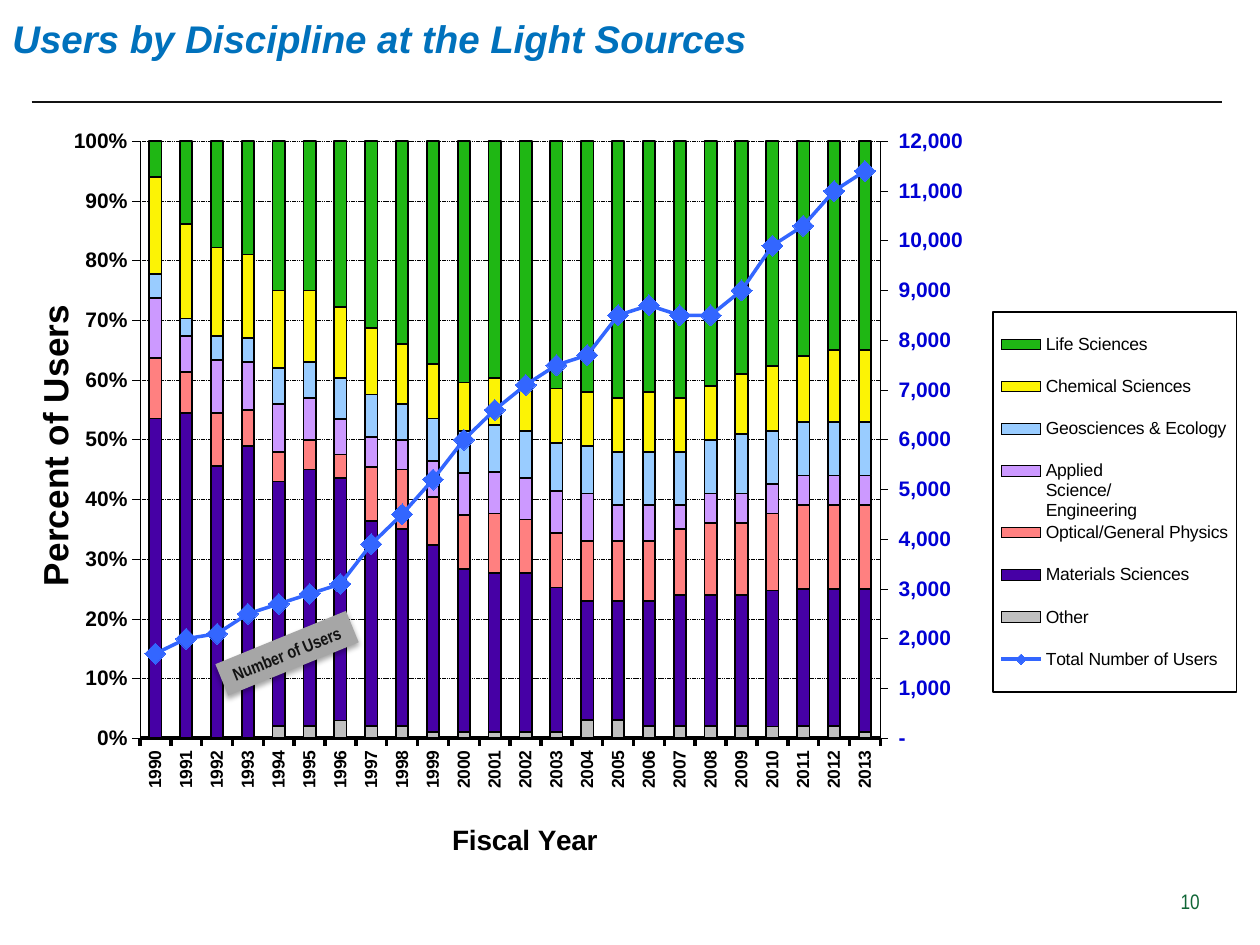
from copy import deepcopy
from pptx import Presentation
from pptx.chart.axis import CategoryAxis, ValueAxis
from pptx.chart.data import CategoryChartData as Data
from pptx.dml.color import RGBColor as RGB
from pptx.enum.chart import XL_CHART_TYPE as Kind, XL_LEGEND_POSITION as Pos
from pptx.enum.chart import XL_MARKER_STYLE as Mark, XL_TICK_MARK as Tick
from pptx.enum.dml import MSO_LINE as Dash
from pptx.enum.shapes import MSO_CONNECTOR as Conn, MSO_SHAPE as Shape
from pptx.enum.text import MSO_ANCHOR as Anchor, PP_ALIGN as Align
from pptx.oxml import parse_xml
from pptx.oxml.ns import nsdecls, qn
from pptx.util import Pt

COLORS = {
    "title": "0071BC", "ink": "131313", "black": "000000", "page": "106636",
    "note": "A6A6A6", "count": "0000D4", "line": "3366FF",
}
YEARS = [str(y) for y in range(1990, 2014)]
# Name, fill, percent of users per year
SHARES = [
    ("Other", "C0C0C0",
     [0, 0, 0, 0, 2, 2, 3, 2, 2, 1, 1, 1, 1, 1, 3, 3, 2, 2, 2, 2, 2, 2, 2, 1]),
    ("Materials Sciences", "4600A5",
     [53, 55, 46, 49, 41, 43, 41, 34, 33, 31, 27, 27,
      27, 24, 20, 20, 21, 22, 22, 22, 23, 23, 23, 24]),
    ("Optical/General Physics", "FF8080",
     [10, 7, 9, 6, 5, 5, 4, 9, 10, 8, 9, 10,
      9, 9, 10, 10, 10, 11, 12, 12, 13, 14, 14, 14]),
    ("Applied Science/Engineering", "CC99FF",
     [10, 6, 9, 8, 8, 7, 6, 5, 5, 6, 7, 7, 7, 7, 8, 6, 6, 4, 5, 5, 5, 5, 5, 5]),
    ("Geosciences & Ecology", "99CCFF",
     [4, 3, 4, 4, 6, 6, 7, 7, 6, 7, 7, 8, 8, 8, 8, 9, 9, 9, 9, 10, 9, 9, 9, 9]),
    ("Chemical Sciences", "FCF305",
     [16, 16, 15, 14, 13, 12, 12, 11, 10, 9, 8, 8,
      8, 9, 9, 9, 10, 9, 9, 10, 11, 11, 12, 12]),
    ("Life Sciences", "1FB714",
     [6, 14, 18, 19, 25, 25, 28, 31, 34, 37, 40, 40,
      41, 41, 42, 43, 42, 43, 41, 39, 38, 36, 35, 35]),
]
TOTALS = [1700, 2000, 2100, 2500, 2700, 2900, 3100, 3900, 4500, 5200, 6000, 6600,
          7100, 7500, 7700, 8500, 8700, 8500, 8500, 9000, 9900, 10300, 11000, 11400]


def tint(name):
    return RGB.from_string(COLORS.get(name, name))


def set_font(font, size, color, face="Arial", bold=False, italic=False):
    font.size, font.name, font.bold, font.italic = Pt(size), face, bold, italic
    font.color.rgb = tint(color)


def set_line(line, color, width):
    line.color.rgb = tint(color)
    line.width = Pt(width)


def set_text(frame, text, size, color, **style):
    frame.text = text
    set_font(frame.paragraphs[0].runs[0].font, size, color, **style)


def drop(node, tag):
    for old in node.findall(qn(tag)):
        node.remove(old)


def set_place(node, index, x, y, w=None, h=None, inner=False):
    """Fix a chart part at fractions of the chart area."""
    drop(node, "c:layout")
    tags = [("layoutTarget", "inner")] if inner else []
    tags += [("xMode", "edge"), ("yMode", "edge"), ("x", x), ("y", y)]
    if w:
        tags += [("w", w), ("h", h)]
    body = "".join(f'<c:{tag} val="{val}"/>' for tag, val in tags)
    node.insert(index, parse_xml(
        f'<c:layout {nsdecls("c")}><c:manualLayout>{body}</c:manualLayout></c:layout>'))


def turn(node):
    for body in node.iter(qn("a:bodyPr")):
        body.set("rot", "-5400000")
        body.set("vert", "horz")


def add_head(slide, x, y, w, h):
    box = slide.shapes.add_textbox(Pt(x), Pt(y), Pt(w), Pt(h))
    frame = box.text_frame
    frame.word_wrap, frame.margin_top = True, 0
    set_text(frame, "Users by Discipline at the Light Sources", 22, "title",
             bold=True, italic=True)
    frame.paragraphs[0].line_spacing = 0.9
    # Rule under the title
    rule = slide.shapes.add_connector(
        Conn.STRAIGHT, Pt(x + 18), Pt(58.3), Pt(x + 698.4), Pt(58.3))
    set_line(rule.line, "ink", 1.5)
    rule._element.spPr.append(parse_xml(f'<a:effectLst {nsdecls("a")}/>'))


def add_page(slide, x, y, w, h):
    frame = slide.shapes.add_textbox(Pt(x), Pt(y), Pt(w), Pt(h)).text_frame
    frame.word_wrap, frame.vertical_anchor = True, Anchor.MIDDLE
    set_text(frame, "10", 12, "page", face="Arial Narrow")
    frame.paragraphs[0].alignment = Align.RIGHT


def set_axis(axis, title, size, x, y):
    set_text(axis.axis_title.text_frame, title, size, "black", bold=True)
    set_place(axis.axis_title._element, 1, x, y)
    axis.major_tick_mark, axis.minor_tick_mark = Tick.OUTSIDE, Tick.NONE


def add_totals(chart):
    """Move the last series to a line on a right-hand axis."""
    area = chart._chartSpace.chart.plotArea
    bars = area.find(qn("c:barChart"))
    row = bars.findall(qn("c:ser"))[-1]
    drop(row, "c:invertIfNegative")
    lines = parse_xml(
        f'<c:lineChart {nsdecls("c")}><c:grouping val="standard"/>'
        '<c:varyColors val="0"/><c:marker val="1"/>'
        '<c:axId val="501"/><c:axId val="502"/></c:lineChart>')
    lines.insert(2, row)
    bars.addnext(lines)

    # Second pair of axes, modelled on the first
    left = area.find(qn("c:valAx"))
    right, base = deepcopy(left), deepcopy(area.find(qn("c:catAx")))
    left.addnext(right)
    right.addnext(base)
    for node, own, other in ((base, "501", "502"), (right, "502", "501")):
        node.find(qn("c:axId")).set("val", own)
        node.find(qn("c:crossAx")).set("val", other)
        drop(node, "c:title")
    CategoryAxis(base).visible = False
    right.find(qn("c:axPos")).set("val", "r")
    drop(right, "c:crosses")
    right.find(qn("c:crossAx")).addnext(
        parse_xml(f'<c:crosses {nsdecls("c")} val="max"/>'))
    axis = ValueAxis(right)
    axis.has_major_gridlines = False
    axis.minimum_scale, axis.maximum_scale, axis.major_unit = 0, 12000, 1000
    axis.tick_labels.number_format = '_(* #,##0_);_(* \\(#,##0\\);_(* "-"??_);_(@_)'
    set_font(axis.tick_labels.font, 12, "count", bold=True)

    total = chart.plots[1].series[0]
    total.smooth = False
    set_line(total.format.line, "line", 2)
    total.marker.style, total.marker.size = Mark.DIAMOND, 12
    total.marker.format.fill.solid()
    total.marker.format.fill.fore_color.rgb = tint("line")
    set_line(total.marker.format.line, "line", 0.75)


def add_users(slide, x, y, w, h):
    data = Data()
    data.categories = YEARS
    for name, _, vals in SHARES:
        data.add_series(name, vals)
    data.add_series("Total Number of Users", TOTALS)
    chart = slide.shapes.add_chart(
        Kind.COLUMN_STACKED_100, Pt(x), Pt(y), Pt(w), Pt(h), data).chart
    chart.has_title = False
    set_font(chart.font, 10, "black")
    set_place(chart._chartSpace.chart.plotArea, 0, 0.122, 0.031, 0.574, 0.772, True)

    # Stacked columns
    plot = chart.plots[0]
    plot.gap_width, plot.overlap, plot.vary_by_categories = 150, 100, False
    for row, (_, color, _) in zip(plot.series, SHARES):
        row.format.fill.solid()
        row.format.fill.fore_color.rgb = tint(color)
        set_line(row.format.line, "black", 1)

    # Axes
    cat, val = chart.category_axis, chart.value_axis
    set_axis(cat, "Fiscal Year", 16, 0.36, 0.905)
    set_axis(val, "Percent of Users", 20, 0.034, 0.234)
    turn(val.axis_title._element)
    set_font(cat.tick_labels.font, 10, "black", bold=True)
    turn(cat._element.find(qn("c:txPr")))
    set_line(cat.format.line, "black", 2)
    set_font(val.tick_labels.font, 12, "black", bold=True)
    val.tick_labels.number_format = "0%"
    val.tick_labels.number_format_is_linked = False
    val.minimum_scale, val.maximum_scale, val.major_unit = 0, 1, 0.1
    set_line(val.format.line, "black", 0.25)
    set_line(val.major_gridlines.format.line, "black", 0.25)
    val.major_gridlines.format.line.dash_style = Dash.SQUARE_DOT
    add_totals(chart)

    # Legend
    chart.has_legend = True
    key = chart.legend
    key.position, key.include_in_layout = Pos.RIGHT, False
    set_font(key.font, 10, "black")
    set_place(key._element, 1, 0.783, 0.252, 0.189, 0.491)
    key._element.find(qn("c:txPr")).addprevious(parse_xml(
        f'<c:spPr {nsdecls("c", "a")}><a:ln w="12700"><a:solidFill>'
        f'<a:srgbClr val="{COLORS["black"]}"/></a:solidFill></a:ln></c:spPr>'))


def add_note(slide, x, y, w, h):
    note = slide.shapes.add_shape(Shape.RECTANGLE, Pt(x), Pt(y), Pt(w), Pt(h))
    note.rotation = 337.8
    note.fill.solid()
    note.fill.fore_color.rgb = tint("note")
    note.line.fill.background()
    note._element.spPr.append(parse_xml(
        f'<a:effectLst {nsdecls("a")}><a:outerShdw blurRad="39370" dist="22860" '
        f'dir="5400000" rotWithShape="0"><a:srgbClr val="{COLORS["black"]}">'
        '<a:alpha val="35000"/></a:srgbClr></a:outerShdw></a:effectLst>'))
    note.text_frame.word_wrap = False
    set_text(note.text_frame, "Number of Users", 10, "ink",
             face="Arial Narrow", bold=True)


# Whole slide
deck = Presentation()
deck.slide_width, deck.slide_height = Pt(720), Pt(540)
page = deck.slides.add_slide(deck.slide_layouts[6])
add_head(page, 0, 11.5, 720, 36)
add_page(page, 662.4, 500.4, 30.2, 28.8)
add_users(page, -10, 67, 737.3, 442)
add_note(page, 123.8, 363.6, 80.6, 19.4)
deck.save("out.pptx")
